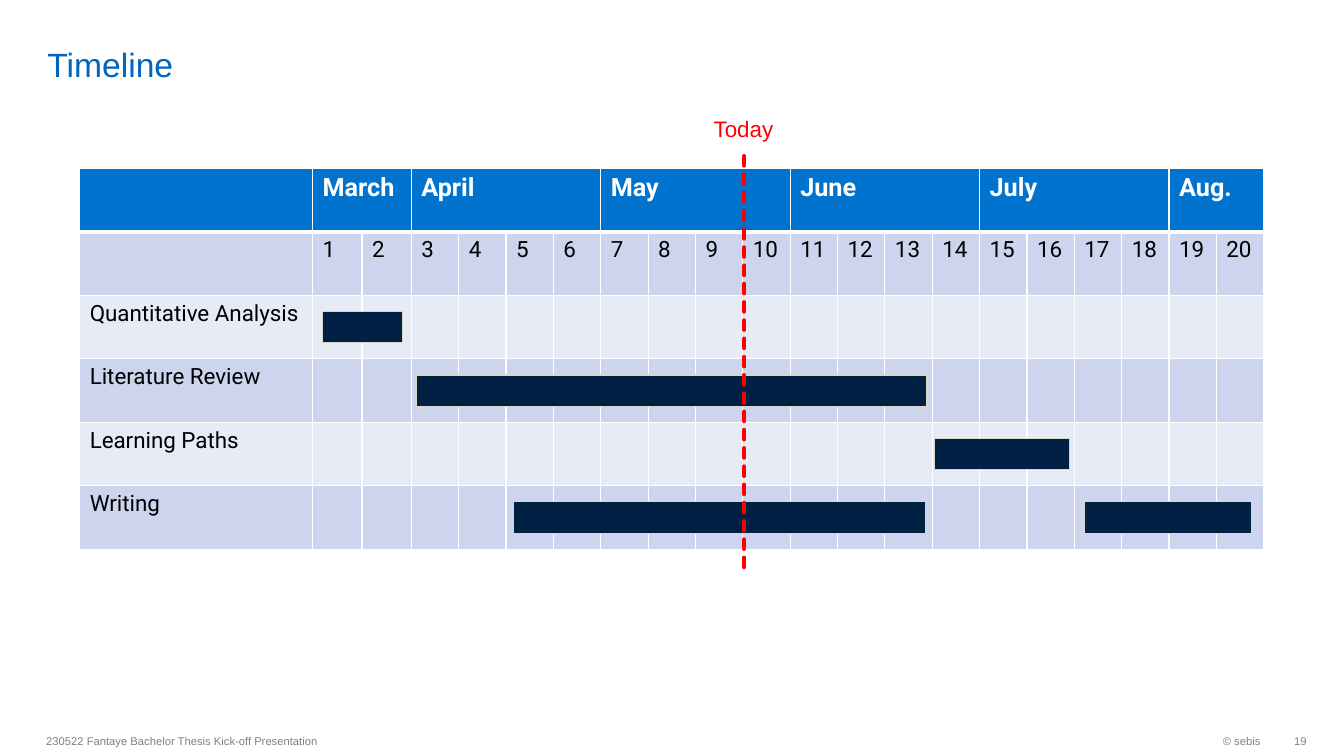
import pptx
import pptx.util
import pptx.dml.color
import pptx.enum.dml
import pptx.enum.shapes
import pptx.enum.text
import pptx.oxml
import pptx.oxml.ns
import lxml.etree

Inches = pptx.util.Inches
Pt = pptx.util.Pt
RGBColor = pptx.dml.color.RGBColor
ANCHOR = pptx.enum.text.MSO_ANCHOR
ALIGN = pptx.enum.text.PP_ALIGN
qn = pptx.oxml.ns.qn

TITLE_BLUE = RGBColor(0x00, 0x65, 0xBD)
HEADER_BLUE = RGBColor(0x00, 0x73, 0xCF)
BAND_DARK = RGBColor(0xCC, 0xD5, 0xED)
BAND_LIGHT = RGBColor(0xE7, 0xEB, 0xF6)
BAR_NAVY = RGBColor(0x00, 0x21, 0x43)
BAR_EDGE = RGBColor(0xDA, 0xD7, 0xCB)
GREY = RGBColor(0x80, 0x80, 0x80)
RED = RGBColor(0xFF, 0x00, 0x00)
WHITE = RGBColor(0xFF, 0xFF, 0xFF)
BLACK = RGBColor(0x00, 0x00, 0x00)

LABEL_W, MARCH_W, WEEK_W, ROW_H = 2.31, 0.49, 0.47, 0.63
WEEKS = 20
MONTHS = [("March", 2), ("April", 4), ("May", 4), ("June", 4), ("July", 4), ("Aug.", 2)]
TASKS = [
    ("Quantitative Analysis", [(2.41, 0.79)]),
    ("Literature Review", [(3.34, 5.06)]),
    ("Learning Paths", [(8.48, 1.34)]),
    ("Writing", [(4.3, 4.09), (9.97, 1.65)]),
]


def set_text(tf, text, size, color, name="Arial", bold=False, align=ALIGN.LEFT):
    p = tf.paragraphs[0]
    p.alignment = align
    r = p.add_run()
    r.text = text
    r.font.color.rgb = color
    for key, value in {"size": Pt(size), "name": name, "bold": bold}.items():
        setattr(r.font, key, value)


def format_frame(tf, **values):
    for key, value in values.items():
        setattr(tf, key, value)


def add_label(s, box, text, size, color, align=ALIGN.LEFT, **frame):
    tf = s.shapes.add_textbox(*map(Inches, box)).text_frame
    format_frame(tf, word_wrap=True, **frame)
    set_text(tf, text, size, color, align=align)


def add_title(s, box, text):
    title = s.shapes.title
    title.left, title.top, title.width, title.height = map(Inches, box)
    format_frame(title.text_frame, vertical_anchor=ANCHOR.BOTTOM, word_wrap=True,
                 margin_top=0, margin_bottom=0)
    set_text(title.text_frame, text, 24, TITLE_BLUE)


def style_cell(cell, fill, top, bottom):
    cell.fill.solid()
    cell.fill.fore_color.rgb = fill
    tcPr = cell._tc.get_or_add_tcPr()
    sides = {"lnL": 1, "lnR": 1, "lnT": top, "lnB": bottom}
    for i, (side, width) in enumerate(sides.items()):
        ln = lxml.etree.Element(qn("a:" + side), w=str(Pt(width)))
        color = lxml.etree.SubElement(ln, qn("a:solidFill"))
        lxml.etree.SubElement(color, qn("a:srgbClr"), val=str(WHITE))
        tcPr.insert(i, ln)


def add_schedule(s, left, top):
    rows = len(TASKS) + 2
    widths = [LABEL_W] + [MARCH_W] * 2 + [WEEK_W] * (WEEKS - 2)
    frame = s.shapes.add_table(rows, len(widths), Inches(left), Inches(top),
                               Inches(sum(widths)), Inches(ROW_H * rows))
    table = frame.table
    table.horz_banding = False
    for column, width in zip(table.columns, widths):
        column.width = Inches(width)
    for i, row in enumerate(table.rows):
        row.height = Inches(ROW_H)
        fill = HEADER_BLUE if i == 0 else BAND_DARK if i % 2 else BAND_LIGHT
        for cell in row.cells:
            style_cell(cell, fill, 3 if i == 1 else 1, 3 if i == 0 else 1)
    start = 1
    for month, span in MONTHS:
        cell = table.cell(0, start)
        cell.merge(table.cell(0, start + span - 1))
        set_text(cell.text_frame, month, 18, WHITE, "Roboto", True)
        start += span
    for week in range(1, WEEKS + 1):
        set_text(table.cell(1, week).text_frame, str(week), 16, BLACK, "Roboto")
    for i, (task, bars) in enumerate(TASKS, 2):
        set_text(table.cell(i, 0).text_frame, task, 16, BLACK, "Roboto")
        for offset, width in bars:
            add_bar(s, (left + offset, top + ROW_H * i + 0.16, width, 0.31))


def add_bar(s, box):
    bar = s.shapes.add_shape(pptx.enum.shapes.MSO_SHAPE.ROUNDED_RECTANGLE, *map(Inches, box))
    bar.adjustments[0] = 0
    bar.shadow.inherit = False
    bar.fill.solid()
    bar.fill.fore_color.rgb = BAR_NAVY
    bar.line.color.rgb = BAR_EDGE
    bar.line.width = Pt(0.75)


def add_today(s, x, top, bottom):
    line = s.shapes.add_connector(pptx.enum.shapes.MSO_CONNECTOR.STRAIGHT,
                                  *map(Inches, (x, top, x, bottom)))
    line.line.color.rgb = RED
    line.line.width = Pt(3.25)
    line.line.dash_style = pptx.enum.dml.MSO_LINE.SQUARE_DOT
    spPr = line._element.spPr
    spPr.get_or_add_ln().set("cap", "rnd")
    lxml.etree.SubElement(spPr, qn("a:effectLst"))
    add_label(s, (x - 0.4, top - 0.46, 0.87, 0.37), "Today", 16, RED)


def add_footer(s, top):
    middle = {"vertical_anchor": ANCHOR.MIDDLE}
    add_label(s, (0.36, top, 6.3, 0.32), "230522 Fantaye Bachelor Thesis Kick-off Presentation",
              8, GREY, **middle)
    add_label(s, (10.26, top, 2.34, 0.32), "© sebis", 8, GREY, ALIGN.RIGHT, **middle)
    add_label(s, (12.6, top, 0.36, 0.32), "19", 8, GREY, ALIGN.RIGHT, margin_right=0, **middle)


def main():
    prs = pptx.Presentation()
    prs.slide_width, prs.slide_height = Inches(13.33), Inches(7.5)
    s = prs.slides.add_slide(prs.slide_layouts[5])
    add_title(s, (0.37, 0.05, 11.58, 0.79), "Timeline")
    add_schedule(s, 0.79, 1.67)
    add_today(s, 7.38, 1.55, 5.64)
    add_footer(s, 7.19)
    prs.save("out.pptx")


if __name__ == "__main__":
    main()
